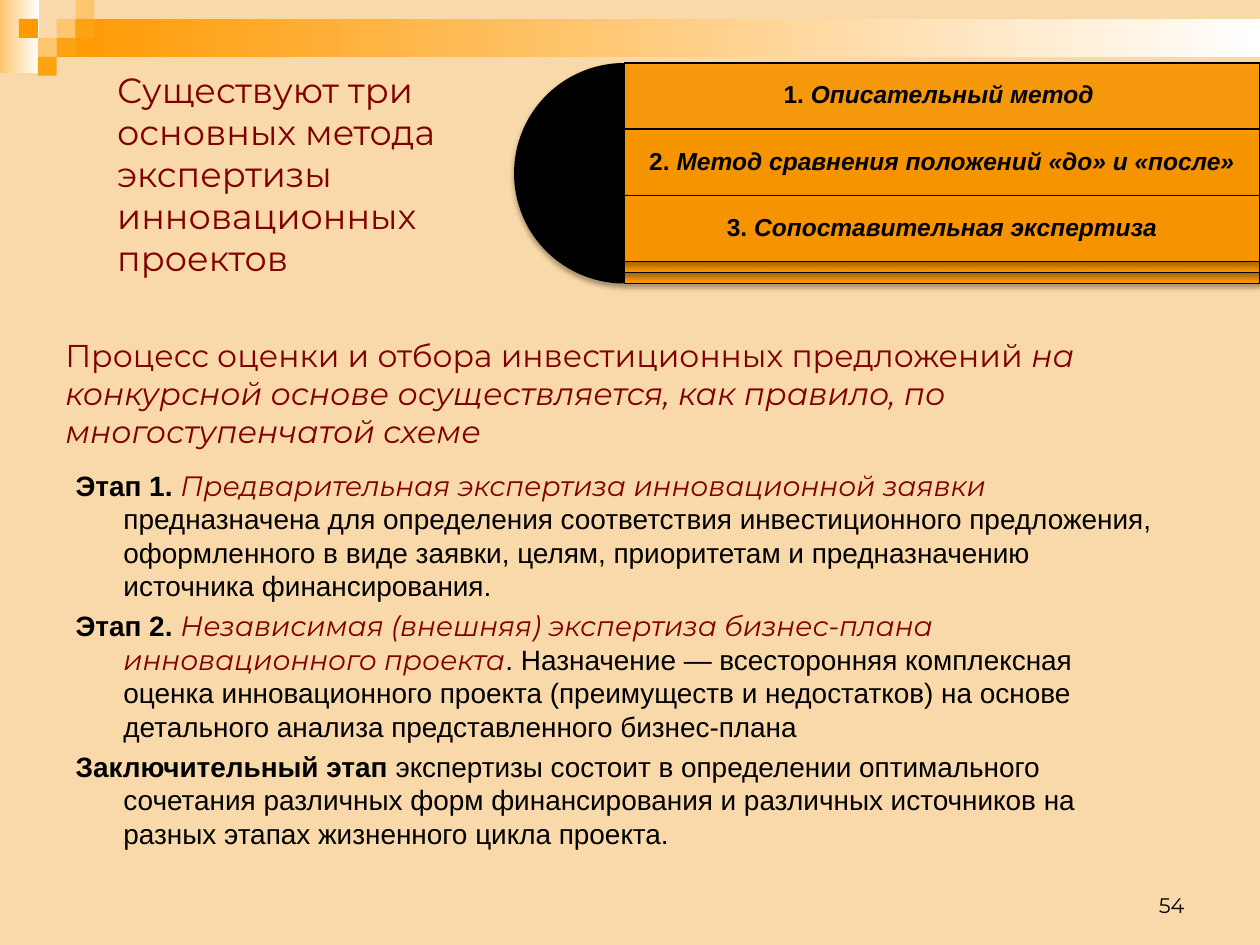
from dataclasses import dataclass

from lxml import etree
from pptx import Presentation
from pptx import util as u
from pptx.dml.color import RGBColor
from pptx.enum import shapes, text
from pptx.oxml.ns import qn

Inches, Pt = u.Inches, u.Pt
RECT, PIE = shapes.MSO_SHAPE.RECTANGLE, shapes.MSO_SHAPE.PIE


@dataclass(frozen=True)
class Theme:
    background: str = "F9D9A9"
    orange: str = "FF9900"
    amber: str = "FBA313"
    pale: str = "FCC66E"
    white: str = "FFFFFF"
    heading: str = "800000"
    ink: str = "000000"
    display: str = "Montserrat"
    plain: str = "Arial"
    title_size: float = 20
    subtitle_size: float = 18
    body_size: float = 16
    method_size: float = 14
    number_size: float = 12


T = Theme()

METHODS = [
    ("1. ", "Описательный метод "),
    ("2. ", "Метод сравнения положений «до» и\u00a0«после»"),
    ("3.\u00a0", "Сопоставительная экспертиза"),
]
# Each stage: bold label, highlighted name, explanation
STAGES = [
    ("Этап 1. ", "Предварительная экспертиза инновационной заявки ",
     "предназначена для определения соответствия инвестиционного предложения, "
     "оформленного в виде заявки, целям, приоритетам и предназначению "
     "источника финансирования."),
    ("Этап 2. ", "Независимая (внешняя) экспертиза бизнес-плана инновационного проекта",
     ". Назначение ― всесторонняя комплексная оценка инновационного проекта "
     "(преимуществ и недостатков) на основе детального анализа "
     "представленного бизнес-плана"),
    ("Заключительный этап ", "",
     "экспертизы состоит в определении оптимального сочетания различных форм "
     "финансирования и различных источников на разных этапах жизненного цикла проекта."),
]


def rgb(color):
    return RGBColor.from_string(color)


def place(sp, box):
    sp.left, sp.top, sp.width, sp.height = (Inches(v) for v in box)


def add_run(p, words, size, font, color, bold=False, italic=False):
    r = p.add_run()
    r.text = words
    f = r.font
    f.size, f.name, f.bold, f.italic = Pt(size), font, bold, italic
    f.color.rgb = rgb(color)


def frame(sp, anchor, margin=None):
    tf = sp.text_frame
    tf.word_wrap = True
    tf.auto_size = text.MSO_AUTO_SIZE.NONE
    tf.vertical_anchor = anchor
    if margin is not None:
        tf.margin_left = tf.margin_right = tf.margin_top = tf.margin_bottom = Inches(margin)
    return tf


def add_textbox(s, box, anchor, margin=None):
    return frame(s.shapes.add_textbox(*(Inches(v) for v in box)), anchor, margin)


def add_shape(s, kind, box, color):
    sp = s.shapes.add_shape(kind, *(Inches(v) for v in box))
    sp.shadow.inherit = False
    sp.line.fill.background()
    sp.fill.solid()
    sp.fill.fore_color.rgb = rgb(color)
    return sp


def add_fade(s, box, color):
    """Rectangle fading from a colour to white, left to right."""
    sp = add_shape(s, RECT, box, color)
    sp.fill.gradient()
    sp.fill.gradient_angle = 0
    for stop, shade in zip(sp.fill.gradient_stops, (color, T.white)):
        stop.color.rgb = rgb(shade)


def add_alpha(color_element, percent):
    etree.SubElement(color_element, qn("a:alpha"), val=str(percent * 1000))


def add_shadow(sp):
    effects = sp._element.spPr.find(qn("a:effectLst"))
    outer = etree.SubElement(effects, qn("a:outerShdw"), blurRad=str(Pt(3.1)),
                             dist=str(Pt(1.8)), dir="5400000", rotWithShape="0")
    add_alpha(etree.SubElement(outer, qn("a:srgbClr"), val=T.ink), 35)


def header_band(s, x, y, width):
    unit = 0.15
    add_fade(s, (x, y, 0.31, 0.58), T.pale)
    add_fade(s, (x + 3 * unit, y + unit, width - 3 * unit, 2 * unit), T.orange)
    cells = [(3, 1, T.pale), (4, 0, T.pale), (4, 1, T.amber), (2, 2, T.pale),
             (1, 1, T.orange), (3, 2, T.amber), (2, 3, T.amber)]
    for col, row, color in cells:
        add_shape(s, RECT, (x + col * unit, y + row * unit, unit, unit), color)


def title(s, box):
    sp = s.shapes.title
    place(sp, box)
    p = frame(sp, text.MSO_ANCHOR.MIDDLE).paragraphs[0]
    p.alignment = text.PP_ALIGN.LEFT
    style = (T.title_size, T.display, T.heading)
    add_run(p, "Существуют три основных метода экспертизы инновационных", *style)
    p.add_line_break()
    add_run(p, "проектов", *style)


def method_target(s, box):
    """Nested half discs, each with a bar to the right that carries one method."""
    x, y, width, height = box
    radius = height / 2
    bar_x, bar_width = x + radius, width - radius
    step = 0.3 * height
    for i, (number, name) in enumerate(METHODS):
        top = y + i * step
        size = height * (1 - 0.35 * i)
        disc = add_shape(s, PIE, (bar_x - size / 2, top, size, size), T.ink)
        disc.adjustments[0], disc.adjustments[1] = 54, 162
        add_shadow(disc)
        bar = add_shape(s, RECT, (bar_x, top, bar_width, size), T.orange)
        bar.line.color.rgb = rgb(T.ink)
        bar.line.width = Pt(0.75)
        add_alpha(bar._element.spPr.find(qn("a:solidFill"))[0], 90)
        add_shadow(bar)
        tf = add_textbox(s, (bar_x, top, bar_width, step), text.MSO_ANCHOR.MIDDLE, 0.06)
        p = tf.paragraphs[0]
        p.alignment = text.PP_ALIGN.CENTER
        p.line_spacing = 0.9
        style = (T.method_size, T.plain, T.ink, True)
        add_run(p, number, *style)
        add_run(p, name, *style, italic=True)


def subtitle(s, box):
    p = add_textbox(s, box, text.MSO_ANCHOR.MIDDLE).paragraphs[0]
    style = (T.subtitle_size, T.display, T.heading)
    add_run(p, "Процесс оценки и отбора инвестиционных предложений ", *style)
    add_run(p, "на конкурсной основе осуществляется, как правило, "
               "по многоступенчатой схеме", *style, italic=True)


def stages(s, box):
    sp = s.placeholders[1]
    place(sp, box)
    tf = frame(sp, text.MSO_ANCHOR.TOP)
    for i, (label, name, details) in enumerate(STAGES):
        p = tf.add_paragraph() if i else tf.paragraphs[0]
        p.line_spacing, p.space_before = Pt(19.1), Pt(3.8)
        pPr = p._p.get_or_add_pPr()
        pPr.set("marL", str(Inches(0.38)))
        pPr.set("indent", str(Inches(-0.38)))
        etree.SubElement(pPr, qn("a:buNone"))
        add_run(p, label, T.body_size, T.plain, T.ink, bold=True)
        if name:
            add_run(p, name, T.body_size, T.display, T.heading, italic=True)
        add_run(p, details, T.body_size, T.plain, T.ink)


def page_number(s, box):
    p = add_textbox(s, box, text.MSO_ANCHOR.BOTTOM).paragraphs[0]
    p.alignment = text.PP_ALIGN.RIGHT
    add_run(p, "54", T.number_size, T.display, T.ink)


def main():
    prs = Presentation()
    prs.slide_width, prs.slide_height = Inches(10), Inches(7.5)
    s = prs.slides.add_slide(prs.slide_layouts[1])
    s.background.fill.solid()
    s.background.fill.fore_color.rgb = rgb(T.background)
    header_band(s, 0, 0, 10)
    title(s, (0.83, 0.92, 3.5, 0.92))
    method_target(s, (4.08, 0.5, 5.92, 1.75))
    page_number(s, (7.17, 6.83, 2.33, 0.5))
    subtitle(s, (0.42, 2.58, 9, 1.08))
    stages(s, (0.5, 3.67, 8.83, 3.58))
    prs.save("out.pptx")


if __name__ == "__main__":
    main()
